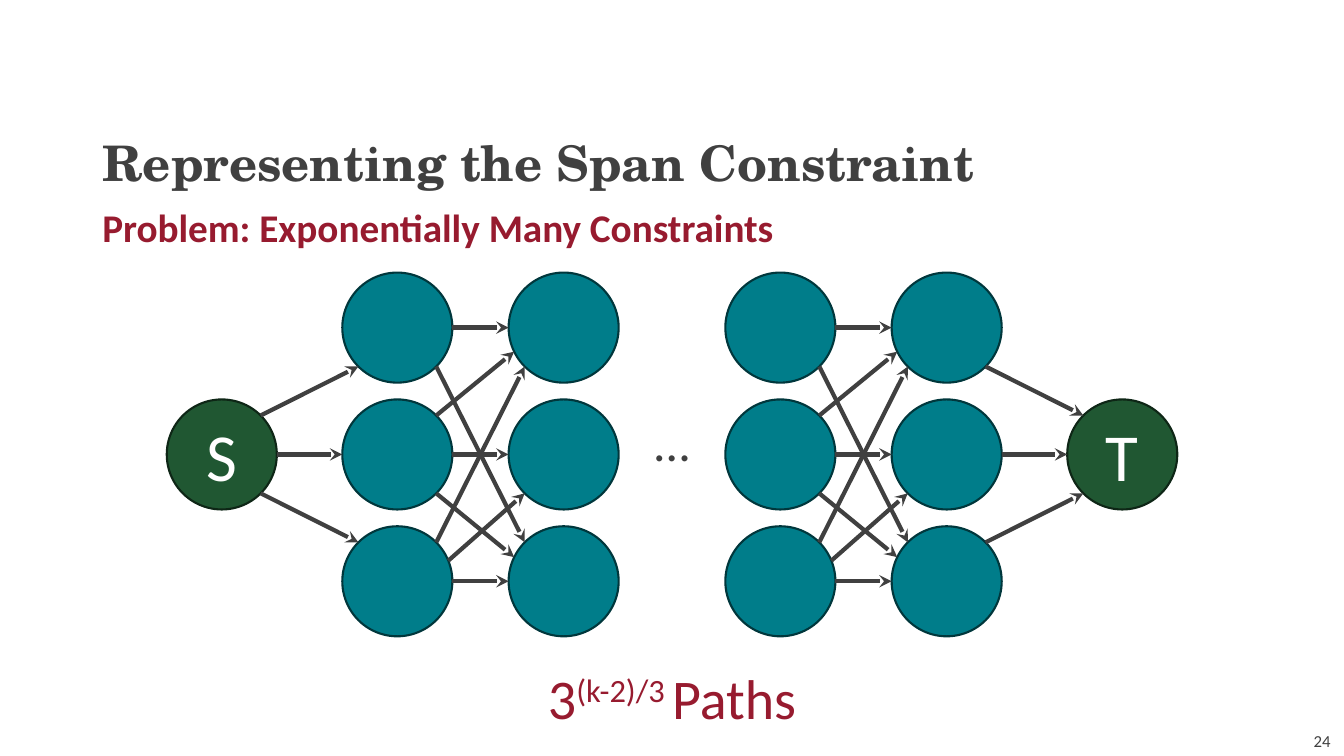
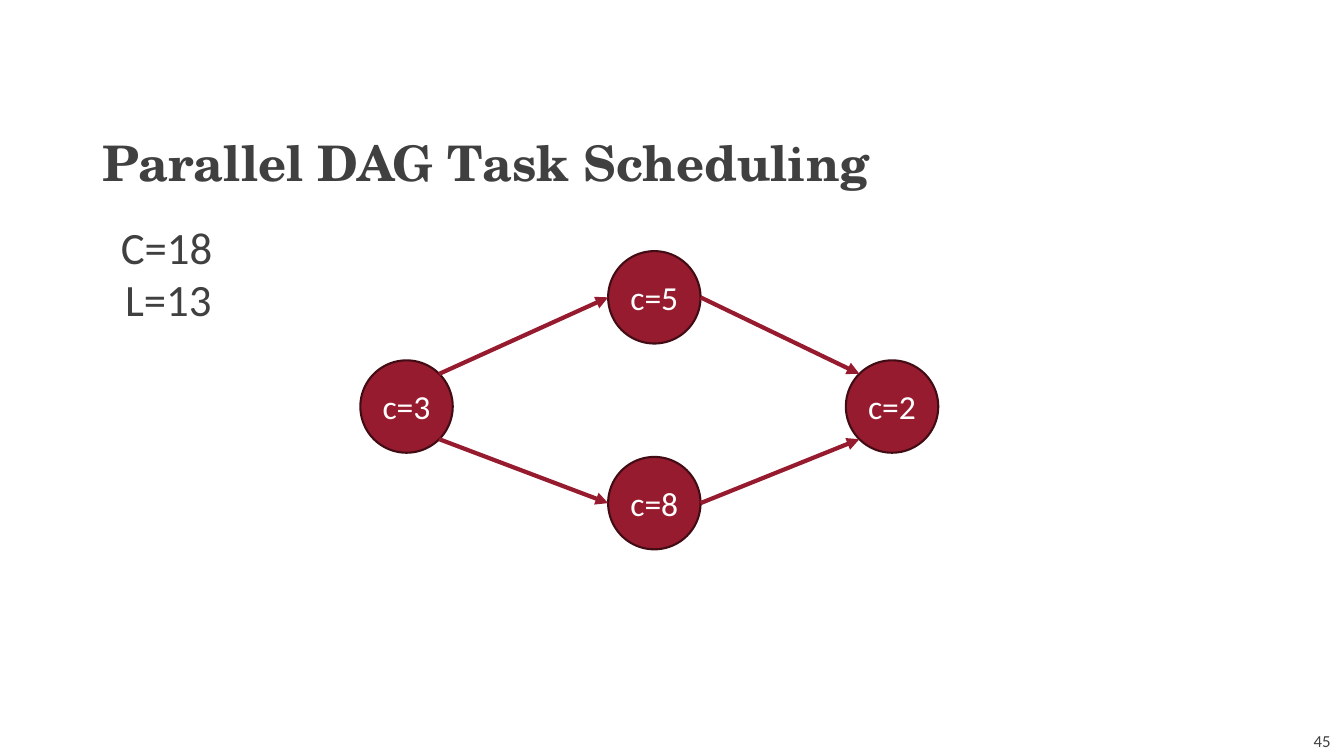
import math

import lxml.etree
import pptx
import pptx.dml.color
import pptx.enum.shapes
import pptx.enum.text
import pptx.oxml.ns
import pptx.util

# Slide and grid: 160 columns by 90 rows of square cells
COLUMNS, ROWS = 160, 90
SLIDE_WIDTH, SLIDE_HEIGHT = pptx.util.Inches(13.333), pptx.util.Inches(7.5)
CELL = SLIDE_HEIGHT / ROWS

COLORS = {
    "text": "404040",
    "white": "FFFFFF",
    "red": "971B2F",
    "red_edge": "420C15",
    "teal": "007D8A",
    "teal_edge": "00373C",
    "green": "205732",
    "green_edge": "0E2616",
}

# Text styles shared by the slides: font attributes, then colour
STYLES = {
    "title": ({"name": "TeX Gyre Schola", "size": 35, "bold": True}, "text"),
    "subtitle": ({"name": "Calibri", "size": 28, "bold": True}, "red"),
    "number": ({"name": "Calibri", "size": 12}, "text"),
    "value": ({"name": "Calibri", "size": 32}, "text"),
    "ellipsis": ({"name": "Calibri", "size": 36}, "text"),
    "formula": ({"name": "Calibri", "size": 40}, "red"),
    "terminal": ({"name": "Calibri", "size": 48}, "white"),
    "task": ({"name": "Calibri", "size": 24}, "white"),
}
CENTER = pptx.enum.text.PP_ALIGN.CENTER

# Edges between two layers: from row, to row, leaving angle, entering angle
LAYER_EDGES = [
    (0, 0, 0, 180), (1, 1, 0, 180), (2, 2, 0, 180),
    (0, 2, 45, 225), (2, 0, -45, 135),
    (1, 0, -45, 154), (1, 2, 45, 206), (2, 1, -22, 135),
]
# Angles for the fan from the source to each row; the sink mirrors them
FAN_ANGLES = [(-45, 135), (0, 180), (45, 225)]


def cells(count):
    return pptx.util.Emu(round(count * CELL))


def rgb(name):
    return pptx.dml.color.RGBColor.from_string(COLORS[name])


def set_attributes(target, values):
    for name, value in values.items():
        setattr(target, name, value)


def add_run(paragraph, text, style, baseline=None):
    formats, color = STYLES[style]
    run = paragraph.add_run()
    run.text = text
    set_attributes(run.font, {**formats, "size": pptx.util.Pt(formats["size"])})
    run.font.color.rgb = rgb(color)
    if baseline:
        run.font._element.set("baseline", str(baseline * 1000))


def add_text(slide, area, parts, style, wrap=True, **paragraph_formats):
    """Add a text box; parts holds (text, baseline percentage) pairs."""
    box = slide.shapes.add_textbox(*map(cells, area))
    box.text_frame.word_wrap = wrap
    paragraph = box.text_frame.paragraphs[0]
    set_attributes(paragraph, paragraph_formats)
    for text, baseline in parts:
        add_run(paragraph, text, style, baseline)


def add_node(slide, center, diameter, color, label="", style="task"):
    """Draw a circle and return its centre and radius for the edges."""
    x, y = center
    radius = diameter / 2
    shape = slide.shapes.add_shape(
        pptx.enum.shapes.MSO_SHAPE.OVAL,
        *map(cells, (x - radius, y - radius, diameter, diameter)))
    shape.shadow.inherit = False
    shape.fill.solid()
    shape.fill.fore_color.rgb = rgb(color)
    shape.line.color.rgb = rgb(color + "_edge")
    shape.line.width = pptx.util.Pt(1.5)
    if label:
        set_attributes(shape.text_frame, {
            "margin_left": 0, "margin_right": 0,
            "margin_top": 0, "margin_bottom": 0, "word_wrap": False,
            "vertical_anchor": pptx.enum.text.MSO_ANCHOR.MIDDLE,
        })
        paragraph = shape.text_frame.paragraphs[0]
        paragraph.alignment = CENTER
        add_run(paragraph, label, style)
    return x, y, radius


def rim_point(node, degrees):
    """Point on a circle, with angles running clockwise from the right."""
    x, y, radius = node
    angle = math.radians(degrees)
    return cells(x + radius * math.cos(angle)), cells(y + radius * math.sin(angle))


def add_edge(slide, start, end, leaving, entering, color, head):
    connector = slide.shapes.add_connector(
        pptx.enum.shapes.MSO_CONNECTOR.STRAIGHT,
        *rim_point(start, leaving), *rim_point(end, entering))
    connector.line.color.rgb = rgb(color)
    connector.line.width = pptx.util.Pt(3)
    properties = connector._element.spPr
    qn = pptx.oxml.ns.qn
    lxml.etree.SubElement(properties.find(qn("a:ln")), qn("a:tailEnd"), type=head)
    lxml.etree.SubElement(properties, qn("a:effectLst"))


def add_base_slide(presentation, title, number):
    slide = presentation.slides.add_slide(presentation.slide_layouts[6])
    add_text(slide, (155.2, 86.4, 4.8, 3.6), [(number, None)], "number", wrap=False)
    add_text(slide, (11, 16, 138, 7.2), [(title, None)], "title", line_spacing=0.9)
    return slide


def build_span_slide(presentation):
    slide = add_base_slide(presentation, "Representing the Span Constraint", "24")
    add_text(slide, (11, 24.2, 138, 7.2),
             [("Problem: Exponentially Many Constraints", None)],
             "subtitle", line_spacing=0.9)

    # Nodes, mirrored about the slide's middle column
    middle, middle_row, row_pitch, diameter = COLUMNS / 2, 54.1, 15.1, 13.1
    source, sink = [
        add_node(slide, (middle + offset, middle_row), diameter, "green", label, "terminal")
        for offset, label in ((-53.6, "S"), (53.6, "T"))]
    layers = [
        [add_node(slide, (middle + offset, middle_row + row * row_pitch), diameter, "teal")
         for row in (-1, 0, 1)]
        for offset in (-32.7, -12.9, 12.9, 32.7)]

    # Edges
    for left, right in (layers[:2], layers[2:]):
        for from_row, to_row, leaving, entering in LAYER_EDGES:
            add_edge(slide, left[from_row], right[to_row], leaving, entering,
                     "text", "stealth")
    for first, last, (leaving, entering) in zip(layers[0], layers[-1], FAN_ANGLES):
        add_edge(slide, source, first, leaving, entering, "text", "stealth")
        add_edge(slide, last, sink, 180 - entering, 180 - leaving, "text", "stealth")

    # Skipped layers and path count
    add_text(slide, (middle - 3.3, 48.4, 6.6, 8.5), [("…", None)], "ellipsis",
             wrap=False, alignment=CENTER)
    add_text(slide, (0, 78.4, COLUMNS, 9.2),
             [("3", None), ("(k-2)/3 ", 30), ("Paths", None)],
             "formula", alignment=CENTER)


def build_scheduling_slide(presentation):
    slide = add_base_slide(presentation, "Parallel DAG Task Scheduling", "45")

    # Task graph
    first, upper, lower, last = [
        add_node(slide, center, 11, "red", label)
        for center, label in (
            ((48.4, 48.4), "c=3"), ((77.9, 35.4), "c=5"),
            ((77.9, 59.9), "c=8"), ((106.2, 48.4), "c=2"))]
    for start, end, leaving, entering in (
            (first, upper, -45, 180), (first, lower, 45, 180),
            (lower, last, 0, 135), (upper, last, 0, 225)):
        add_edge(slide, start, end, leaving, entering, "red", "triangle")

    # Total work and span
    for area, text in (((13.2, 25.6, 13.4, 7.7), "C=18"),
                       ((13.7, 31.8, 12.8, 7.7), "L=13")):
        add_text(slide, area, [(text, None)], "value", wrap=False)


def main():
    presentation = pptx.Presentation()
    set_attributes(presentation, {"slide_width": SLIDE_WIDTH, "slide_height": SLIDE_HEIGHT})
    build_span_slide(presentation)
    build_scheduling_slide(presentation)
    presentation.save("out.pptx")


if __name__ == "__main__":
    main()
